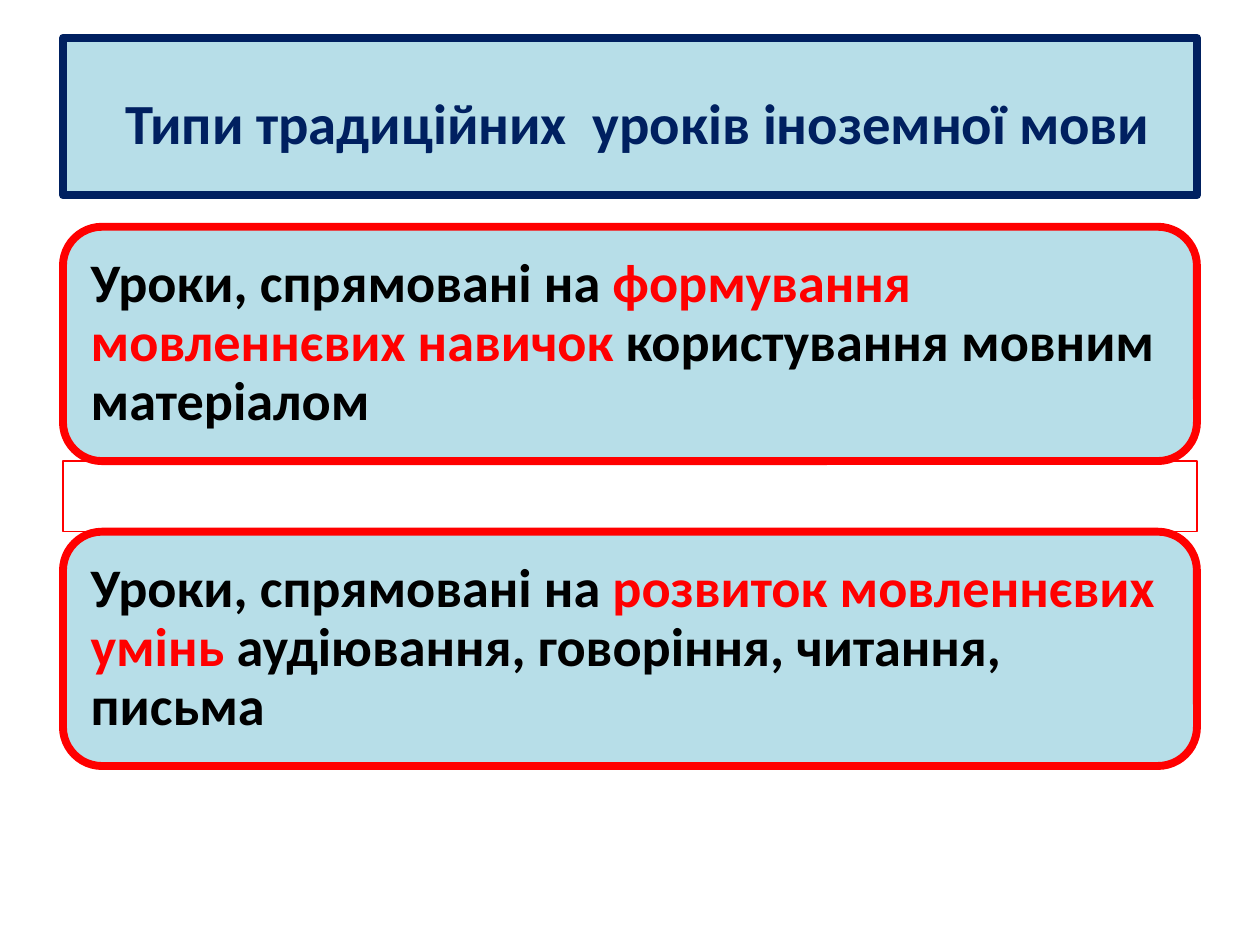
from pptx import Presentation
from pptx.dml.color import RGBColor
from pptx.enum.shapes import MSO_SHAPE
from pptx.enum.text import MSO_ANCHOR, PP_ALIGN
from pptx.util import Inches, Pt

PALE_BLUE = RGBColor(0xB7, 0xDE, 0xE8)
NAVY = RGBColor(0x00, 0x20, 0x60)
RED = RGBColor(0xFF, 0x00, 0x00)
BLACK = RGBColor(0x00, 0x00, 0x00)

SLIDE_WIDTH, SLIDE_HEIGHT = 10, 7.5
MARGIN = SLIDE_WIDTH * 0.05
CONTENT_WIDTH = SLIDE_WIDTH - 2 * MARGIN
TITLE_TOP, TITLE_HEIGHT = SLIDE_HEIGHT * 0.04, 1.25
CARDS_TOP = SLIDE_HEIGHT * 0.24
CARD_HEIGHT, GAP_HEIGHT = 1.86, 0.56

# Each lesson type: opening, highlighted words, ending
LESSON_TYPES = [
    ("Уроки, спрямовані на ", "формування мовленнєвих навичок ",
     "користування мовним матеріалом"),
    ("Уроки, спрямовані на ", "розвиток мовленнєвих умінь ",
     "аудіювання, говоріння, читання, письма"),
]


def add_box(slide, kind, top, height, line_color, line_width, fill_color=None):
    """Add a box across the full content width."""
    shape = slide.shapes.add_shape(
        kind, Inches(MARGIN), Inches(top), Inches(CONTENT_WIDTH), Inches(height))
    shape.shadow.inherit = False
    if fill_color is None:
        shape.fill.background()
    else:
        shape.fill.solid()
        shape.fill.fore_color.rgb = fill_color
    shape.line.color.rgb = line_color
    shape.line.width = Pt(line_width)
    return shape


def start_text(shape, alignment, size, color):
    """Prepare the first paragraph of a box for bold text."""
    frame = shape.text_frame
    frame.word_wrap = True
    frame.vertical_anchor = MSO_ANCHOR.MIDDLE
    paragraph = frame.paragraphs[0]
    paragraph.alignment = alignment
    paragraph.font.name = "Calibri"
    paragraph.font.size = Pt(size)
    paragraph.font.bold = True
    paragraph.font.color.rgb = color
    return paragraph


def add_run(paragraph, text):
    run = paragraph.add_run()
    run.text = text
    return run


def add_title(slide):
    shape = add_box(slide, MSO_SHAPE.RECTANGLE, TITLE_TOP, TITLE_HEIGHT,
                    NAVY, 4.5, PALE_BLUE)
    paragraph = start_text(shape, PP_ALIGN.CENTER, 32.4, NAVY)
    add_run(paragraph, " ").font.size = Pt(39.6)
    add_run(paragraph, "Типи традиційних  уроків іноземної мови")


def add_lesson_card(slide, top, parts):
    shape = add_box(slide, MSO_SHAPE.ROUNDED_RECTANGLE, top, CARD_HEIGHT,
                    RED, 4.5, PALE_BLUE)
    frame = shape.text_frame
    frame.margin_left = frame.margin_right = Inches(0.13)
    frame.margin_top = frame.margin_bottom = Inches(0.13)
    paragraph = start_text(shape, PP_ALIGN.LEFT, 31, BLACK)
    paragraph.line_spacing = 0.9
    opening, highlight, ending = parts
    add_run(paragraph, opening)
    add_run(paragraph, highlight).font.color.rgb = RED
    add_run(paragraph, ending)


def main():
    presentation = Presentation()
    presentation.slide_width = Inches(SLIDE_WIDTH)
    presentation.slide_height = Inches(SLIDE_HEIGHT)
    slide = presentation.slides.add_slide(presentation.slide_layouts[6])

    add_title(slide)

    # Lesson cards, with a thin frame filling the gap between them
    for row, parts in enumerate(LESSON_TYPES):
        top = CARDS_TOP + row * (CARD_HEIGHT + GAP_HEIGHT)
        if row > 0:
            add_box(slide, MSO_SHAPE.RECTANGLE, top - GAP_HEIGHT, GAP_HEIGHT,
                    RED, 0.75)
        add_lesson_card(slide, top, parts)

    presentation.save("out.pptx")


if __name__ == "__main__":
    main()
